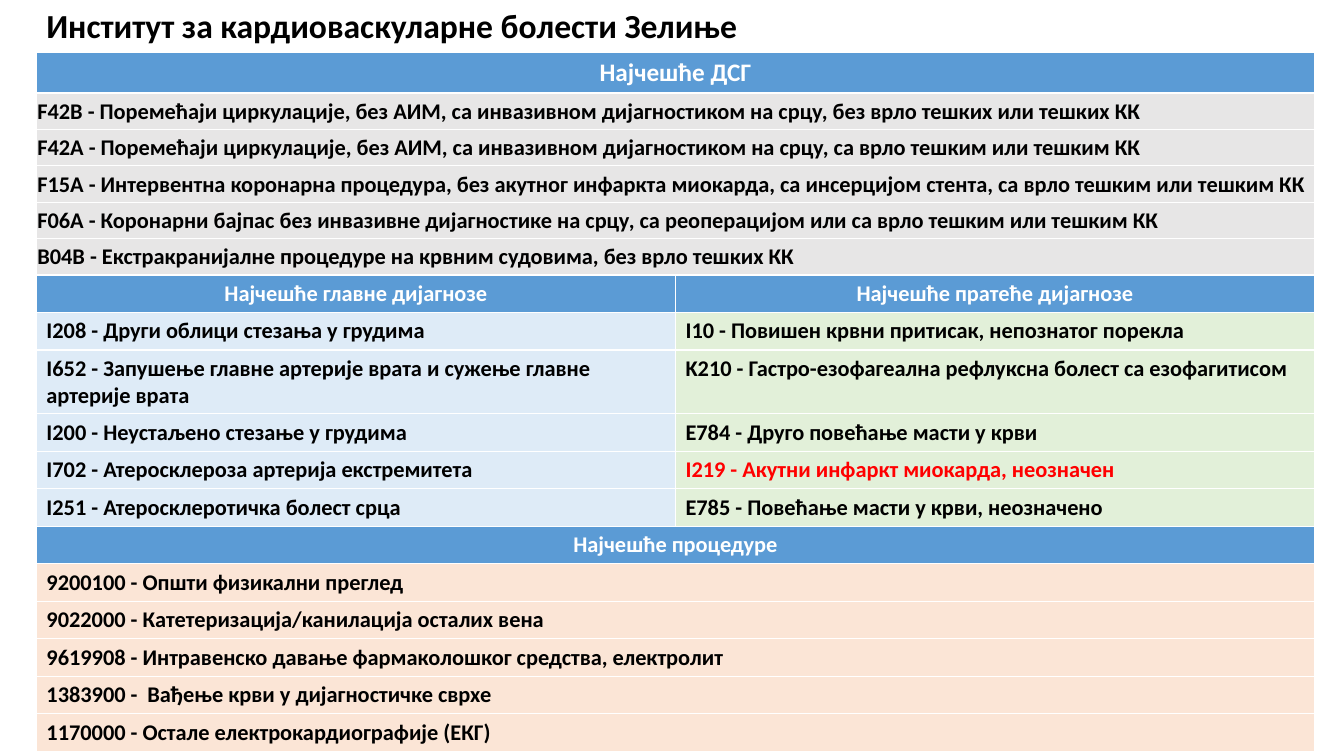
from typing import NamedTuple

import pptx
import pptx.dml.color
import pptx.enum.text
import pptx.presentation
import pptx.slide
import pptx.table
import pptx.util

Pt = pptx.util.Pt
RGBColor = pptx.dml.color.RGBColor
Anchor = pptx.enum.text.MSO_ANCHOR
Align = pptx.enum.text.PP_ALIGN

BLACK = RGBColor(0x00, 0x00, 0x00)
WHITE = RGBColor(0xFF, 0xFF, 0xFF)
RED = RGBColor(0xFF, 0x00, 0x00)
BLUE = RGBColor(0x5B, 0x9B, 0xD5)
GRAY = RGBColor(0xE7, 0xE6, 0xE6)
PALE_BLUE = RGBColor(0xDE, 0xEB, 0xF7)
PALE_GREEN = RGBColor(0xE2, 0xF0, 0xD9)
PALE_ORANGE = RGBColor(0xFB, 0xE5, 0xD6)

FONT = "Calibri"
LEFT = 26
TABLE_TOP = 37.6
TABLE_WIDTH = 913
ROW_HEIGHT = 26.8
TIGHT_ROW_HEIGHT = 26


class Column(NamedTuple):
    heading: str
    fill: RGBColor
    entries: list[str]


class Section(NamedTuple):
    """A heading row and its entry rows, in one full-width or two half-width columns."""
    columns: list[Column]
    heading_size: float = 16
    tight: bool = False


SECTIONS = [
    Section([Column("Најчешће ДСГ", GRAY, [
        "F42B - Поремећаји циркулације, без АИМ, са инвазивном дијагностиком на срцу, без врло тешких или тешких КК",
        "F42A - Поремећаји циркулације, без АИМ, са инвазивном дијагностиком на срцу, са врло тешким или тешким КК",
        "F15A - Интервентна коронарна процедура, без акутног инфаркта миокарда, "
        "са инсерцијом стента, са врло тешким или тешким КК",
        "F06A - Коронарни бајпас без инвазивне дијагностике на срцу, са реоперацијом или са врло тешким или тешким КК",
        "B04B - Екстракранијалне процедуре на крвним судовима, без врло тешких КК",
    ])], heading_size=18, tight=True),
    Section([
        Column("Најчешће главне дијагнозе", PALE_BLUE, [
            "I208 - Други облици стезања у грудима",
            "I652 - Запушење главне артерије врата и сужење главне артерије врата",
            "I200 - Неустаљено стезање у грудима",
            "I702 - Атеросклероза артерија екстремитета",
            "I251 - Атеросклеротичка болест срца",
        ]),
        Column("Најчешће пратеће дијагнозе", PALE_GREEN, [
            "I10 - Повишен крвни притисак, непознатог порекла",
            "K210 - Гастро-езофагеална рефлуксна болест са езофагитисом",
            "E784 - Друго повећање масти у крви",
            "I219 - Акутни инфаркт миокарда, неозначен",
            "E785 - Повећање масти у крви, неозначено",
        ]),
    ]),
    Section([Column("Најчешће процедуре", PALE_ORANGE, [
        "9200100 - Општи физикални преглед",
        "9022000 - Катетеризација/канилација осталих вена",
        "9619908 - Интравенско давање фармаколошког средства, електролит",
        "1383900 - \tВађење крви у дијагностичке сврхе",
        "1170000 - Остале електрокардиографије (ЕКГ)",
    ])]),
]
HIGHLIGHTED_CODES = {"I219"}


def style_text(p, size: float, color: RGBColor) -> None:
    p.font.name = FONT
    p.font.size = Pt(size)
    p.font.bold = True
    p.font.color.rgb = color


def fill_cell(cell: pptx.table._Cell, text: str, fill: RGBColor, color: RGBColor, size: float = 16) -> None:
    cell.fill.solid()
    cell.fill.fore_color.rgb = fill
    cell.text = text
    style_text(cell.text_frame.paragraphs[0], size, color)


def tighten(cell: pptx.table._Cell) -> None:
    cell.vertical_anchor = Anchor.MIDDLE
    cell.margin_left = cell.margin_top = cell.margin_right = Pt(0.72)
    cell.margin_bottom = Pt(0)


def fill_section(table: pptx.table.Table, first_row: int, section: Section) -> int:
    """Write the section and return the row that follows it."""
    end_row = first_row + 1 + len(section.columns[0].entries)
    for row in range(first_row, end_row):
        is_tight = section.tight and row > first_row
        table.rows[row].height = Pt(TIGHT_ROW_HEIGHT if is_tight else ROW_HEIGHT)
        if len(section.columns) == 1:
            table.cell(row, 0).merge(table.cell(row, 1))
    for col, column in enumerate(section.columns):
        heading = table.cell(first_row, col)
        fill_cell(heading, column.heading, BLUE, WHITE, section.heading_size)
        heading.text_frame.paragraphs[0].alignment = Align.CENTER
        for row, entry in enumerate(column.entries, first_row + 1):
            cell = table.cell(row, col)
            color = RED if entry.split()[0] in HIGHLIGHTED_CODES else BLACK
            fill_cell(cell, entry, column.fill, color)
            if section.tight:
                tighten(cell)
    return end_row


def add_title(s: pptx.slide.Slide, text: str) -> None:
    tf = s.shapes.add_textbox(Pt(LEFT), Pt(-11.5), Pt(860), Pt(62)).text_frame
    tf.word_wrap = True
    tf.vertical_anchor = Anchor.MIDDLE
    p = tf.paragraphs[0]
    p.text = text
    p.line_spacing = 0.9
    style_text(p, 24, BLACK)


def add_sections(s: pptx.slide.Slide, sections: list[Section]) -> None:
    rows = sum(1 + len(section.columns[0].entries) for section in sections)
    table = s.shapes.add_table(
        rows, 2, Pt(LEFT), Pt(TABLE_TOP), Pt(TABLE_WIDTH), Pt(rows * ROW_HEIGHT)).table
    table.horz_banding = False
    row = 0
    for section in sections:
        row = fill_section(table, row, section)


def main() -> None:
    prs = pptx.Presentation()
    prs.slide_width, prs.slide_height = Pt(960), Pt(540)
    s = prs.slides.add_slide(prs.slide_layouts[6])
    add_title(s, "Институт за кардиоваскуларне болести Зелиње")
    add_sections(s, SECTIONS)
    prs.save("out.pptx")


if __name__ == "__main__":
    main()
